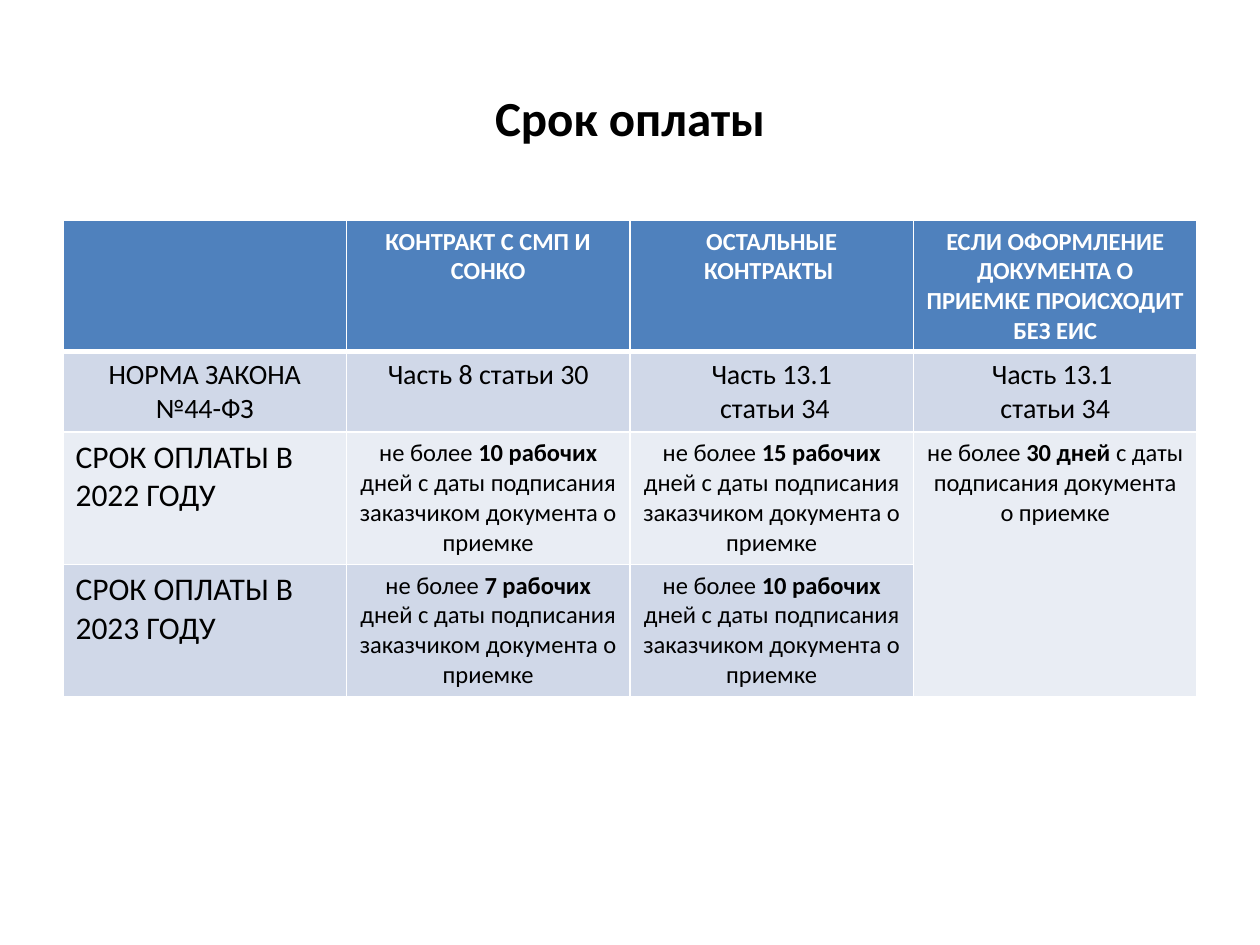
from lxml import etree
from pptx import Presentation
from pptx import util as u
from pptx.dml.color import RGBColor
from pptx.enum import text
from pptx.oxml import ns

WHITE, BLACK = "FFFFFF", "000000"
HEADER, DARK_BAND, LIGHT_BAND = "4F81BD", "D0D8E8", "E9EDF4"
CENTER, LEFT = text.PP_ALIGN.CENTER, text.PP_ALIGN.LEFT


def color(code):
    return RGBColor.from_string(code)


def term(limit, rest="дней с даты подписания заказчиком документа о приемке"):
    """One paragraph of (words, bold) pairs with the limit in bold."""
    return [[("не более ", False), (limit + " ", True), (rest, False)]]


def plain(*lines, bold=False):
    """One paragraph for each line."""
    return [[(line, bold)] for line in lines]


class Page:
    font = "Calibri"

    def __init__(self, deck):
        self.slide = deck.slides.add_slide(deck.slide_layouts[6])

    def add_text(self, frame, paragraphs, size, ink=BLACK, align=CENTER):
        frame.word_wrap = True
        for index, spans in enumerate(paragraphs):
            para = frame.add_paragraph() if index else frame.paragraphs[0]
            para.alignment = align
            for words, bold in spans:
                span = para.add_run()
                span.text = words
                span.font.name = self.font
                span.font.size = u.Pt(size)
                span.font.bold = bold
                span.font.color.rgb = color(ink)

    def title(self, words, left, top, width, height):
        box = self.slide.shapes.add_textbox(*map(u.Inches, (left, top, width, height)))
        box.text_frame.vertical_anchor = text.MSO_ANCHOR.MIDDLE
        self.add_text(box.text_frame, plain(words, bold=True), 28)

    def table(self, left, top, column_width, heights, columns):
        width = column_width * columns
        frame = self.slide.shapes.add_table(
            len(heights), columns,
            *map(u.Inches, (left, top, width, sum(heights))))
        for row, height in zip(frame.table.rows, heights):
            row.height = u.Inches(height)
        for column in frame.table.columns:
            column.width = u.Inches(column_width)
        return frame.table

    def cell(self, cell, fill, bottom=1, top=1):
        """Draws the white borders, in points, and fills the cell."""
        properties = cell._tc.get_or_add_tcPr()
        for side, width in (("L", 1), ("R", 1), ("T", top), ("B", bottom)):
            line = etree.SubElement(properties, ns.qn("a:ln" + side), w=str(u.Pt(width)))
            solid = etree.SubElement(line, ns.qn("a:solidFill"))
            etree.SubElement(solid, ns.qn("a:srgbClr"), val=WHITE)
        cell.fill.solid()
        cell.fill.fore_color.rgb = color(fill)


def main():
    deck = Presentation()
    deck.slide_width, deck.slide_height = u.Inches(10), u.Inches(7.5)
    page = Page(deck)
    page.title("Срок оплаты", 0.5, 0.3, 9, 1.25)

    headings = ["", "КОНТРАКТ С СМП И СОНКО", "ОСТАЛЬНЫЕ КОНТРАКТЫ ",
                "ЕСЛИ ОФОРМЛЕНИЕ ДОКУМЕНТА О ПРИЕМКЕ ПРОИСХОДИТ БЕЗ ЕИС"]
    rows = [
        [plain(words, bold=True) if words else [] for words in headings],
        [plain("НОРМА ЗАКОНА №44-ФЗ"), plain("Часть 8 статьи 30"),
         plain("Часть 13.1", " статьи 34"), plain("Часть 13.1 ", "статьи 34")],
        [plain("СРОК ОПЛАТЫ В 2022 ГОДУ"), term("10 рабочих"), term("15 рабочих"),
         term("30 дней", "с даты подписания документа о приемке")],
        [plain("СРОК ОПЛАТЫ В 2023 ГОДУ"), term("7 рабочих"), term("10 рабочих"), []],
    ]
    fills = [HEADER, DARK_BAND, LIGHT_BAND, DARK_BAND]
    sizes = [14, 16, 14, 14]

    table = page.table(0.5, 1.75, 2.25, [1.04, 0.64, 1.05, 1.05], len(headings))
    table.cell(2, 3).merge(table.cell(3, 3))
    for r, row in enumerate(rows):
        for c, paragraphs in enumerate(row):
            cell = table.cell(r, c)
            fill = LIGHT_BAND if cell.is_spanned else fills[r]
            page.cell(cell, fill, bottom=3 if r == 0 else 1, top=3 if r == 1 else 1)
            row_label = c == 0 and r > 1
            page.add_text(cell.text_frame, paragraphs,
                          size=18 if row_label else sizes[r],
                          ink=BLACK if r else WHITE,
                          align=LEFT if row_label else CENTER)
    deck.save("out.pptx")


if __name__ == "__main__":
    main()
